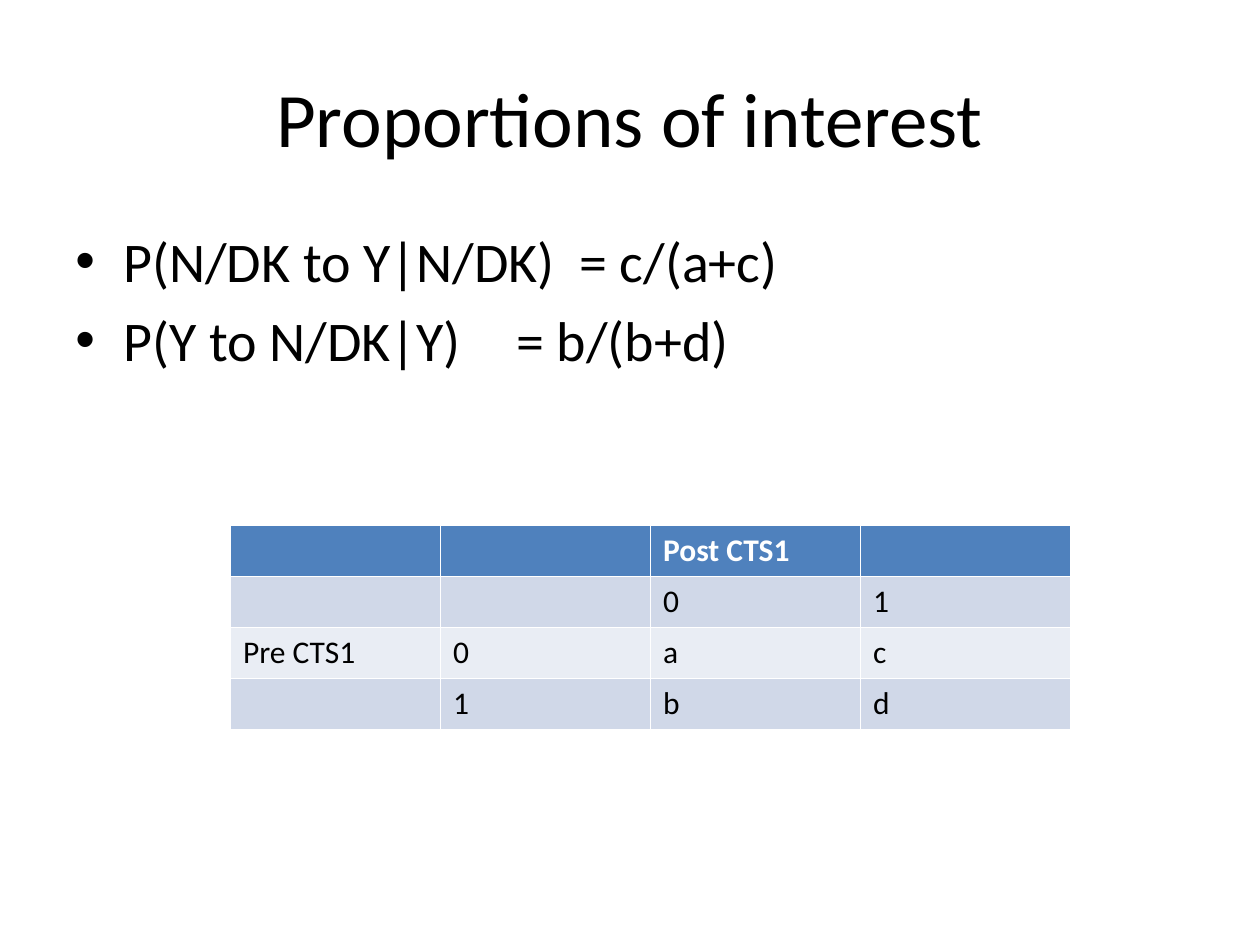
from pptx import Presentation
from pptx.dml.color import RGBColor
from pptx.enum.text import MSO_ANCHOR, PP_ALIGN
from pptx.oxml.ns import qn
from pptx.util import Inches, Pt
from lxml import etree

CENTER, LEFT = PP_ALIGN.CENTER, PP_ALIGN.LEFT
MIDDLE, TOP = MSO_ANCHOR.MIDDLE, MSO_ANCHOR.TOP

TITLE = "Proportions of interest"
FORMULAS = [
    "P(N/DK to Y|N/DK)\t= c/(a+c)",
    "P(Y to N/DK|Y)\t= b/(b+d)",
]
COUNTS = [
    ["", "", "Post CTS1", ""],
    ["", "", "0", "1"],
    ["Pre CTS1", "0", "a", "c"],
    ["", "1", "b", "d"],
]

THEME = {
    "font": "Calibri",
    "title_size": 44, "body_size": 32, "table_size": 18,
    "text": "000000", "header_text": "FFFFFF",
    "header": "4F81BD", "bands": ["E9EDF4", "D0D8E8"],
}

WIDTH, HEIGHT = 10, 7.5
MARGIN = WIDTH * 0.05
CONTENT_WIDTH = WIDTH - 2 * MARGIN
TITLE_BOX = (MARGIN, HEIGHT * 0.04, CONTENT_WIDTH, 1.25)
FORMULA_BOX = (MARGIN, 1.75, CONTENT_WIDTH, HEIGHT * 0.66)
TABLE_BOX = (1.83, 4.17, WIDTH * 2 / 3, 1.62)
BULLET_INDENT = 0.38


def write(frame, lines, size, color=THEME["text"], bold=False, align=LEFT,
          anchor=TOP, bullet=None, space_before=0):
    frame.word_wrap = True
    frame.vertical_anchor = anchor
    for index, line in enumerate(lines):
        para = frame.add_paragraph() if index else frame.paragraphs[0]
        para.alignment = align
        para.space_before = Pt(space_before)
        if bullet:
            properties = para._p.get_or_add_pPr()
            properties.set("marL", str(Inches(BULLET_INDENT)))
            properties.set("indent", str(-Inches(BULLET_INDENT)))
            etree.SubElement(properties, qn("a:buFont"), typeface="Arial")
            etree.SubElement(properties, qn("a:buChar"), char=bullet)
        span = para.add_run()
        span.text = line
        span.font.name = THEME["font"]
        span.font.size = Pt(size)
        span.font.bold = bold
        span.font.color.rgb = RGBColor.from_string(color)


def add_text(page, area, lines, **style):
    box = page.shapes.add_textbox(*map(Inches, area))
    write(box.text_frame, lines, **style)


def add_counts(page):
    table = page.shapes.add_table(
        len(COUNTS), len(COUNTS[0]), *map(Inches, TABLE_BOX)).table
    for row, values in enumerate(COUNTS):
        header = row == 0
        fill = THEME["header"] if header else THEME["bands"][row % 2]
        color = THEME["header_text"] if header else THEME["text"]
        for column, value in enumerate(values):
            cell = table.cell(row, column)
            cell.fill.solid()
            cell.fill.fore_color.rgb = RGBColor.from_string(fill)
            if value:
                write(cell.text_frame, [value], size=THEME["table_size"],
                      color=color, bold=header)


def main():
    deck = Presentation()
    deck.slide_width, deck.slide_height = Inches(WIDTH), Inches(HEIGHT)
    page = deck.slides.add_slide(deck.slide_layouts[6])
    add_text(page, TITLE_BOX, [TITLE], size=THEME["title_size"],
             align=CENTER, anchor=MIDDLE)
    add_text(page, FORMULA_BOX, FORMULAS, size=THEME["body_size"],
             bullet="•", space_before=THEME["body_size"] * 0.2)
    add_counts(page)
    deck.save("out.pptx")


if __name__ == "__main__":
    main()
